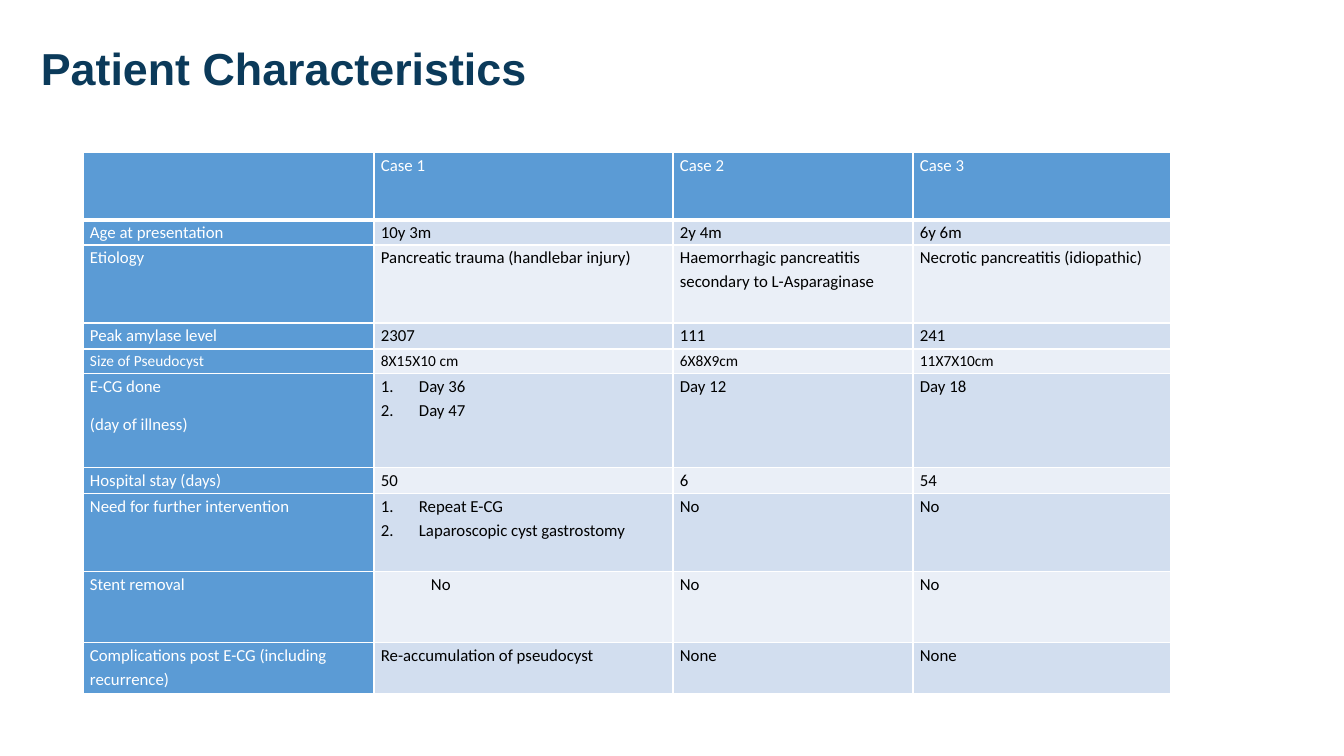
from dataclasses import dataclass

from lxml.etree import SubElement
from pptx import Presentation
from pptx.dml.color import RGBColor as RGB
from pptx.enum.text import MSO_ANCHOR as Anchor
from pptx.oxml.ns import qn
from pptx.util import Pt

PX = 914400 / 100.8
SLIDE_W, SLIDE_H = 1344, 756


def px(n):
    return round(n * PX)


@dataclass(frozen=True)
class Theme:
    title: str = "0B3A5A"
    head: str = "5B9BD5"
    bands: tuple = ("D2DEEF", "EAEFF7")
    white: str = "FFFFFF"
    ink: str = "000000"
    title_font: str = "Arial"
    body_font: str = "Calibri"
    title_size: int = 32
    body_size: int = 12
    small_size: int = 11


def put_text(p, text, *, font, size, color, bold=False, spacing=1.0, after=0,
             left=0, numbered=False):
    """Fill paragraph p; a numbered one hangs by its left indent."""
    pPr = p._p.get_or_add_pPr()
    if left:
        pPr.set("marL", str(px(left)))
        pPr.set("indent", str(-px(left) if numbered else 0))
    if numbered:
        SubElement(pPr, qn("a:buAutoNum"), type="arabicPeriod")
    p.line_spacing = spacing
    p.space_after = Pt(after)
    r = p.add_run()
    r.text = text
    r.font.name, r.font.size, r.font.bold = font, Pt(size), bold
    r.font.color.rgb = RGB.from_string(color)


class SlideBuilder:
    def __init__(self, prs, theme):
        self.theme = theme
        self.s = prs.slides.add_slide(prs.slide_layouts[6])

    def title(self, text, x, y, w, h):
        t = self.theme
        tf = self.s.shapes.add_textbox(px(x), px(y), px(w), px(h)).text_frame
        tf.word_wrap = True
        tf.vertical_anchor = Anchor.MIDDLE
        put_text(tf.paragraphs[0], text, font=t.title_font, size=t.title_size,
                 color=t.title, bold=True, spacing=0.9)

    def borders(self, cell, bottom=1):
        tcPr = cell._tc.get_or_add_tcPr()
        for side, width in (("L", 1), ("R", 1), ("T", 1), ("B", bottom)):
            ln = SubElement(tcPr, qn(f"a:ln{side}"), w=str(Pt(width)))
            fill = SubElement(ln, qn("a:solidFill"))
            SubElement(fill, qn("a:srgbClr"), val=self.theme.white)

    def cell(self, cell, content, *, fill, color, size, bottom=1):
        """Content is one text, a list of paragraphs, or a dict of text and format."""
        self.borders(cell, bottom)
        cell.fill.solid()
        cell.fill.fore_color.rgb = RGB.from_string(fill)
        cell.margin_left = cell.margin_right = px(7)
        cell.margin_top = cell.margin_bottom = 0
        tf = cell.text_frame
        for i, item in enumerate(content if isinstance(content, list) else [content]):
            style = dict(font=self.theme.body_font, size=size, color=color,
                         spacing=1.15, after=10)
            style.update(item if isinstance(item, dict) else {"text": item})
            if style["text"]:
                put_text(tf.add_paragraph() if i else tf.paragraphs[0], **style)

    def table(self, rows, x, y, widths, heights, small_rows=()):
        t = self.theme
        frame = self.s.shapes.add_table(len(rows), len(widths), px(x), px(y),
                                        px(sum(widths)), px(sum(heights)))
        tbl = frame.table
        tbl.first_row = tbl.horz_banding = False
        for column, w in zip(tbl.columns, widths):
            column.width = px(w)
        for i, (row, h) in enumerate(zip(rows, heights)):
            tbl.rows[i].height = px(h)
            for j, content in enumerate(row):
                is_head = i == 0 or j == 0
                self.cell(tbl.cell(i, j), content,
                          fill=t.head if is_head else t.bands[(i - 1) % 2],
                          color=t.white if is_head else t.ink,
                          size=t.small_size if i in small_rows else t.body_size,
                          bottom=3 if i == 0 else 1)


def numbered(first, last):
    return [dict(text=first, left=38, numbered=True, after=0),
            dict(text=last, left=38, numbered=True)]


PATIENTS = [
    ["", "Case 1", "Case 2", "Case 3"],
    ["Age at presentation", "10y 3m", "2y 4m", "6y 6m"],
    ["Etiology", "Pancreatic trauma (handlebar injury)",
     "Haemorrhagic pancreatitis secondary to L-Asparaginase",
     "Necrotic pancreatitis (idiopathic)"],
    ["Peak amylase level", "2307", "111", "241"],
    ["Size of Pseudocyst", "8X15X10 cm", "6X8X9cm", "11X7X10cm"],
    [["E-CG done", "(day of illness)"], numbered("Day 36", "Day 47"),
     "Day 12", "Day 18"],
    ["Hospital stay (days)", "50", "6", "54"],
    ["Need for further intervention",
     numbered("Repeat E-CG", "Laparoscopic cyst gastrostomy"), "No", "No"],
    ["Stent removal", dict(text="No", left=50), "No", "No"],
    ["Complications post E-CG (including recurrence)",
     "Re-accumulation of pseudocyst", "None", "None"],
]


def main():
    prs = Presentation()
    prs.slide_width, prs.slide_height = px(SLIDE_W), px(SLIDE_H)
    slide = SlideBuilder(prs, Theme())
    slide.title("Patient Characteristics", 31, 26, 1113, 89)
    slide.table(PATIENTS, 83, 152, widths=[291, 299, 240, 258],
                heights=[68, 25, 78, 26, 25, 94, 26, 78, 71, 51], small_rows=(4,))
    prs.save("out.pptx")


if __name__ == "__main__":
    main()
